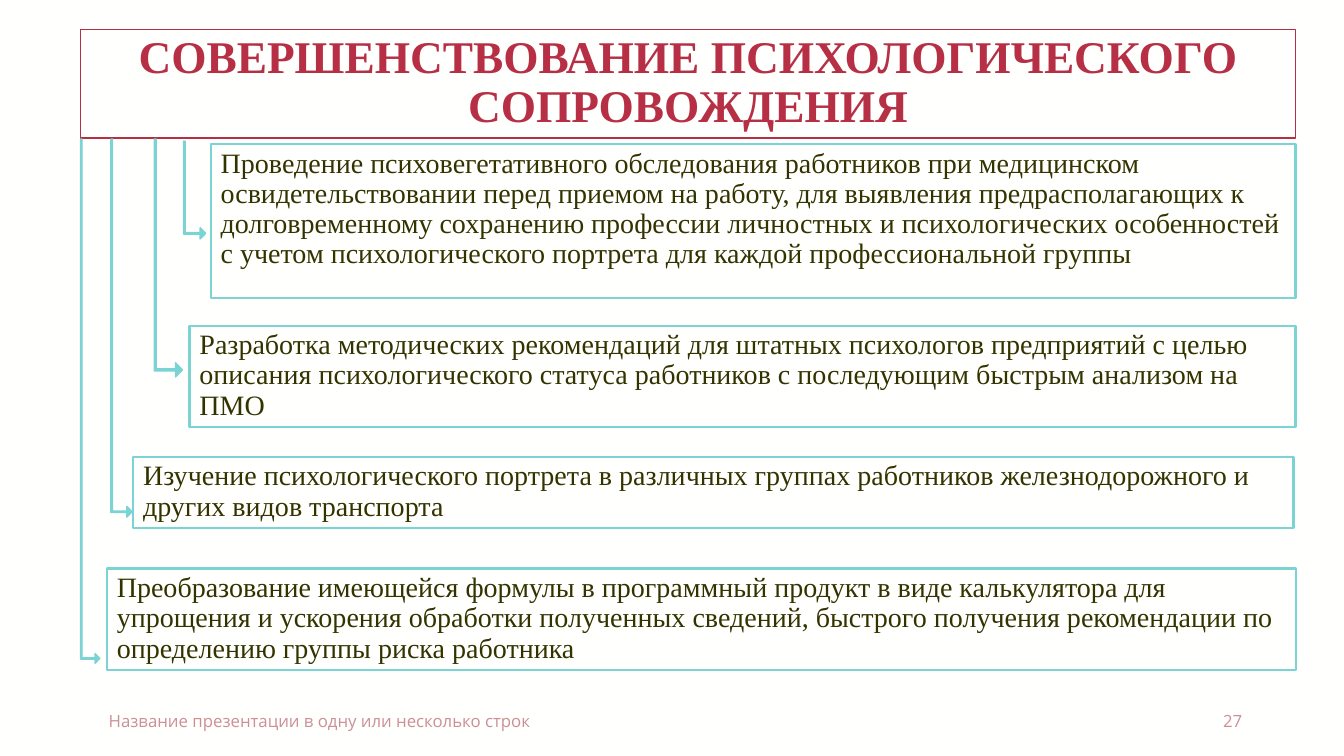
"""Build the slide on improving psychological support."""
from pptx import Presentation
from pptx.dml.color import RGBColor
from pptx.enum.shapes import MSO_SHAPE
from pptx.enum.text import MSO_ANCHOR, MSO_AUTO_SIZE, PP_ALIGN
from pptx.util import Pt

PX = 9144
RECTANGLE, BENT_ARROW = MSO_SHAPE.RECTANGLE, MSO_SHAPE.BENT_UP_ARROW
TOP, MIDDLE = MSO_ANCHOR.TOP, MSO_ANCHOR.MIDDLE
LEFT, CENTER, RIGHT = PP_ALIGN.LEFT, PP_ALIGN.CENTER, PP_ALIGN.RIGHT
NO_AUTOFIT = MSO_AUTO_SIZE.NONE
PAPER = RGBColor(0xFF, 0xFF, 0xFE)
CRIMSON = RGBColor(0xB6, 0x2F, 0x45)
ROSE = RGBColor(0xCC, 0x8F, 0x94)
TEAL = RGBColor(0x7C, 0xD3, 0xD3)
OLIVE = RGBColor(0x33, 0x33, 0x00)
SERIF, SANS = "Times New Roman", "Open Sans"


def write(shape, text, *, size, color, font=SERIF, bold=False, align=LEFT,
          anchor=TOP, spacing=0.9, before=0):
    """Put one formatted paragraph into a shape."""
    frame = shape.text_frame
    frame.word_wrap = True
    frame.auto_size = NO_AUTOFIT
    frame.vertical_anchor = anchor
    para = frame.paragraphs[0]
    para.alignment = align
    para.line_spacing = spacing
    para.space_before = Pt(before)
    span = para.add_run()
    span.text = text
    span.font.name = font
    span.font.size = Pt(size)
    span.font.bold = bold
    span.font.color.rgb = color


deck = Presentation()
deck.slide_width, deck.slide_height = 1333 * PX, 750 * PX
page = deck.slides.add_slide(deck.slide_layouts[5])
page.background.fill.solid()
page.background.fill.fore_color.rgb = PAPER

footers = [
    (98, 754, LEFT, "Название презентации в одну или несколько строк"),
    (942, 300, RIGHT, "27"),
]
for left, width, align, text in footers:
    box = page.shapes.add_textbox(left * PX, 695 * PX, width * PX, 40 * PX)
    write(box, text, size=12, color=ROSE, font=SANS, align=align,
          anchor=MIDDLE, spacing=1)

title = page.shapes.title
title.left, title.top, title.width, title.height = 80 * PX, 29 * PX, 1205 * PX, 108 * PX
title.fill.solid()
title.fill.fore_color.rgb = PAPER
title.line.color.rgb = CRIMSON
title.line.width = Pt(1)
write(title, "СОВЕРШЕНСТВОВАНИЕ ПСИХОЛОГИЧЕСКОГО СОПРОВОЖДЕНИЯ",
      size=32.4, color=CRIMSON, bold=True, align=CENTER)

measures = [
    (209, 143, 1076, 153,
     "Проведение психовегетативного обследования работников при медицинском "
     "освидетельствовании перед приемом на работу, для выявления предрасполагающих "
     "к долговременному сохранению профессии личностных и психологических "
     "особенностей с учетом психологического портрета для каждой "
     "профессиональной группы"),
    (188, 323, 1097, 101,
     "Разработка методических рекомендаций для штатных психологов предприятий с "
     "целью описания психологического статуса работников с последующим быстрым "
     "анализом на ПМО"),
    (132, 453, 1151, 71,
     "Изучение психологического портрета в различных группах работников "
     "железнодорожного и других видов транспорта"),
    (106, 564, 1179, 101,
     "Преобразование имеющейся формулы в программный продукт в виде калькулятора "
     "для упрощения и ускорения обработки полученных сведений, быстрого получения "
     "рекомендации по определению группы риска работника"),
]
for left, top, width, height, text in measures:
    box = page.shapes.add_shape(RECTANGLE, left * PX, top * PX, width * PX, height * PX)
    box.shadow.inherit = False
    box.fill.background()
    box.line.color.rgb = TEAL
    box.line.width = Pt(1.5)
    write(box, text, size=20, color=OLIVE, before=10)

arrows = [(182, 140, 22, 97), (153, 138, 28, 236), (110, 138, 21, 375), (80, 138, 19, 520)]
for left, top, across, drop in arrows:
    shift = (drop - across) * PX // 2
    arrow = page.shapes.add_shape(BENT_ARROW, left * PX - shift, top * PX + shift,
                                  drop * PX, across * PX)
    arrow.rotation = 90
    arrow.adjustments[0] = 0.07
    arrow.adjustments[1] = arrow.adjustments[2] = 0.25
    arrow.shadow.inherit = False
    arrow.fill.solid()
    arrow.fill.fore_color.rgb = TEAL
    arrow.line.color.rgb = TEAL
    arrow.line.width = Pt(1)

deck.save("out.pptx")
